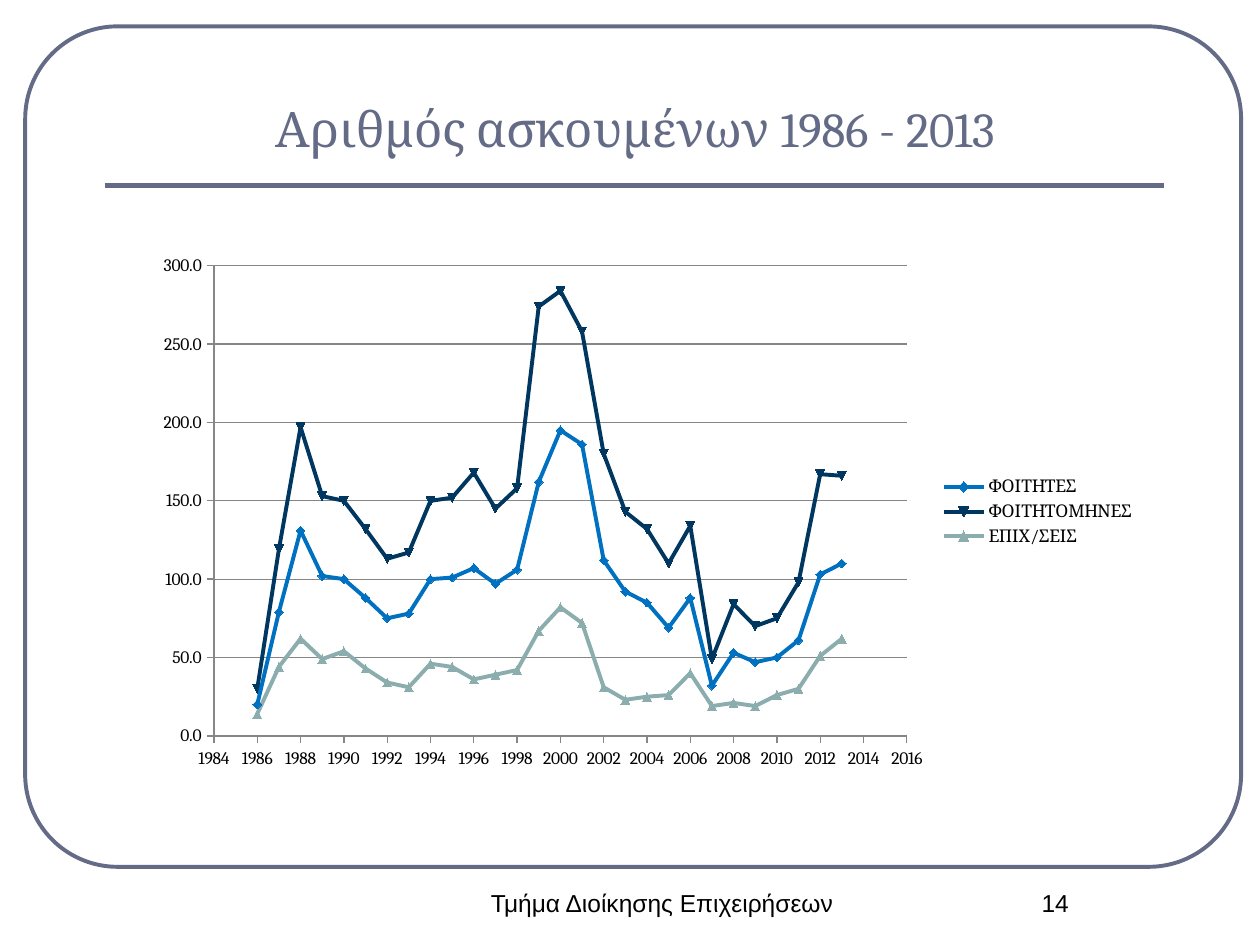
from dataclasses import dataclass

from lxml.etree import SubElement
from pptx import Presentation
from pptx.chart.data import XyChartData
from pptx.dml.color import RGBColor
from pptx.enum.chart import XL_CHART_TYPE as ChartType
from pptx.enum.chart import XL_LEGEND_POSITION as LegendPosition
from pptx.enum.chart import XL_TICK_MARK as TickMark
from pptx.enum.shapes import MSO_CONNECTOR as Connector
from pptx.enum.shapes import MSO_SHAPE as Shape
from pptx.enum.text import MSO_ANCHOR as Anchor
from pptx.enum.text import PP_ALIGN as Align
from pptx.oxml.ns import qn
from pptx.util import Inches, Pt

COLORS = {
    "frame": "646B86",
    "text": "000000",
    "axis": "868686",
    "students": "0070C0",
    "months": "003760",
    "companies": "8CADAE",
}
FIRST_YEAR = 1986


@dataclass
class Label:
    text: str
    left: float
    top: float
    width: float
    height: float
    font: str
    size: int
    color: str
    anchor: Anchor = Anchor.TOP


@dataclass
class YearSeries:
    name: str
    color: str
    values: list[int]


LABELS = [
    Label("Αριθμός ασκουμένων 1986 - 2013", 0.83, 0.36, 8.42, 0.94,
          "Cambria", 28, "frame", Anchor.BOTTOM),
    Label("Τμήμα Διοίκησης Επιχειρήσεων", 3.67, 7, 3.17, 0.5, "Arial", 14, "text"),
    Label("14", 7.5, 7, 1.75, 0.5, "Arial", 14, "text"),
]
SERIES = [
    YearSeries("ΦΟΙΤΗΤΕΣ", "students", [
        20, 79, 131, 102, 100, 88, 75, 78, 100, 101, 107, 97, 106, 162,
        195, 186, 112, 92, 85, 69, 88, 32, 53, 47, 50, 61, 103, 110]),
    YearSeries("ΦΟΙΤΗΤΟΜΗΝΕΣ", "months", [
        30, 119, 197, 153, 150, 132, 113, 117, 150, 152, 168, 145, 158, 274,
        284, 258, 180, 143, 132, 110, 134, 49, 84, 70, 75, 98, 167, 166]),
    YearSeries("ΕΠΙΧ/ΣΕΙΣ", "companies", [
        14, 44, 62, 49, 54, 43, 34, 31, 46, 44, 36, 39, 42, 67,
        82, 72, 31, 23, 25, 26, 40, 19, 21, 19, 26, 30, 51, 62]),
]


def rgb(name: str) -> RGBColor:
    return RGBColor.from_string(COLORS[name])


def style_line(line, color: str, width: float) -> None:
    line.color.rgb = rgb(color)
    line.width = Pt(width)


def add_frame(slide) -> None:
    frame = slide.shapes.add_shape(
        Shape.ROUNDED_RECTANGLE, Inches(0.2), Inches(0.21), Inches(9.65), Inches(6.67))
    frame.adjustments[0] = 0.11
    frame.shadow.inherit = False
    frame.fill.background()
    style_line(frame.line, "frame", 2.25)

    rule = slide.shapes.add_connector(
        Connector.STRAIGHT, Inches(0.83), Inches(1.47), Inches(9.24), Inches(1.47))
    style_line(rule.line, "frame", 3)
    SubElement(rule._element.spPr, qn("a:effectLst"))


def add_label(slide, label: Label) -> None:
    box = slide.shapes.add_textbox(
        Inches(label.left), Inches(label.top), Inches(label.width), Inches(label.height))
    frame = box.text_frame
    frame.word_wrap = True
    frame.vertical_anchor = label.anchor
    paragraph = frame.paragraphs[0]
    paragraph.text = label.text
    paragraph.alignment = Align.CENTER
    paragraph.font.name = label.font
    paragraph.font.size = Pt(label.size)
    paragraph.font.color.rgb = rgb(label.color)


def style_axis(axis, low: int, high: int, step: int, number_format: str) -> None:
    axis.minimum_scale, axis.maximum_scale, axis.major_unit = low, high, step
    axis.major_tick_mark = TickMark.OUTSIDE
    axis.minor_tick_mark = TickMark.NONE
    axis.tick_labels.number_format = number_format
    axis.tick_labels.number_format_is_linked = False
    style_line(axis.format.line, "axis", 0.75)


def set_plot_layout(chart, **fractions: float) -> None:
    plot_area = chart._chartSpace.chart.plotArea
    layout = plot_area.find(qn("c:layout"))
    if layout is None:
        layout = SubElement(plot_area, qn("c:layout"))
        plot_area.insert(0, layout)
    manual = SubElement(layout, qn("c:manualLayout"))
    settings = {"layoutTarget": "inner", "xMode": "edge", "yMode": "edge", **fractions}
    for tag, value in settings.items():
        SubElement(manual, qn(f"c:{tag}")).set("val", str(value))


def add_year_chart(slide) -> None:
    data = XyChartData()
    for item in SERIES:
        series = data.add_series(item.name)
        for year, value in enumerate(item.values, FIRST_YEAR):
            series.add_data_point(year, value)
    chart = slide.shapes.add_chart(
        ChartType.XY_SCATTER_SMOOTH, Inches(1.14), Inches(1.94),
        Inches(7.97), Inches(4.24), data).chart

    chart.has_title = False
    chart.font.name = "Cambria"
    chart.font.size = Pt(10)
    chart.font.color.rgb = rgb("text")
    chart.has_legend = True
    chart.legend.position = LegendPosition.RIGHT
    chart.legend.include_in_layout = False
    chart.plots[0].vary_by_categories = False
    set_plot_layout(chart, x=0.07, y=0.04, w=0.69, h=0.88)

    # Axes and grid
    style_axis(chart.category_axis, 1984, 2016, 2, "0")
    style_axis(chart.value_axis, 0, 300, 50, "0.0")
    chart.category_axis.has_major_gridlines = False
    chart.value_axis.has_major_gridlines = True
    style_line(chart.value_axis.major_gridlines.format.line, "axis", 0.75)

    # Automatic markers follow the index: diamond, triangle down, triangle up
    for index, (series, item) in enumerate(zip(chart.plots[0].series, SERIES), 1):
        series._element.find(qn("c:idx")).set("val", str(index))
        series.smooth = True
        style_line(series.format.line, item.color, 2.25)
        series.marker.size = 5
        series.marker.format.fill.solid()
        series.marker.format.fill.fore_color.rgb = rgb(item.color)
        style_line(series.marker.format.line, item.color, 0.75)


def main() -> None:
    presentation = Presentation()
    presentation.slide_width, presentation.slide_height = Inches(10), Inches(7.5)
    slide = presentation.slides.add_slide(presentation.slide_layouts[6])
    add_frame(slide)
    for label in LABELS:
        add_label(slide, label)
    add_year_chart(slide)
    presentation.save("out.pptx")


if __name__ == "__main__":
    main()
